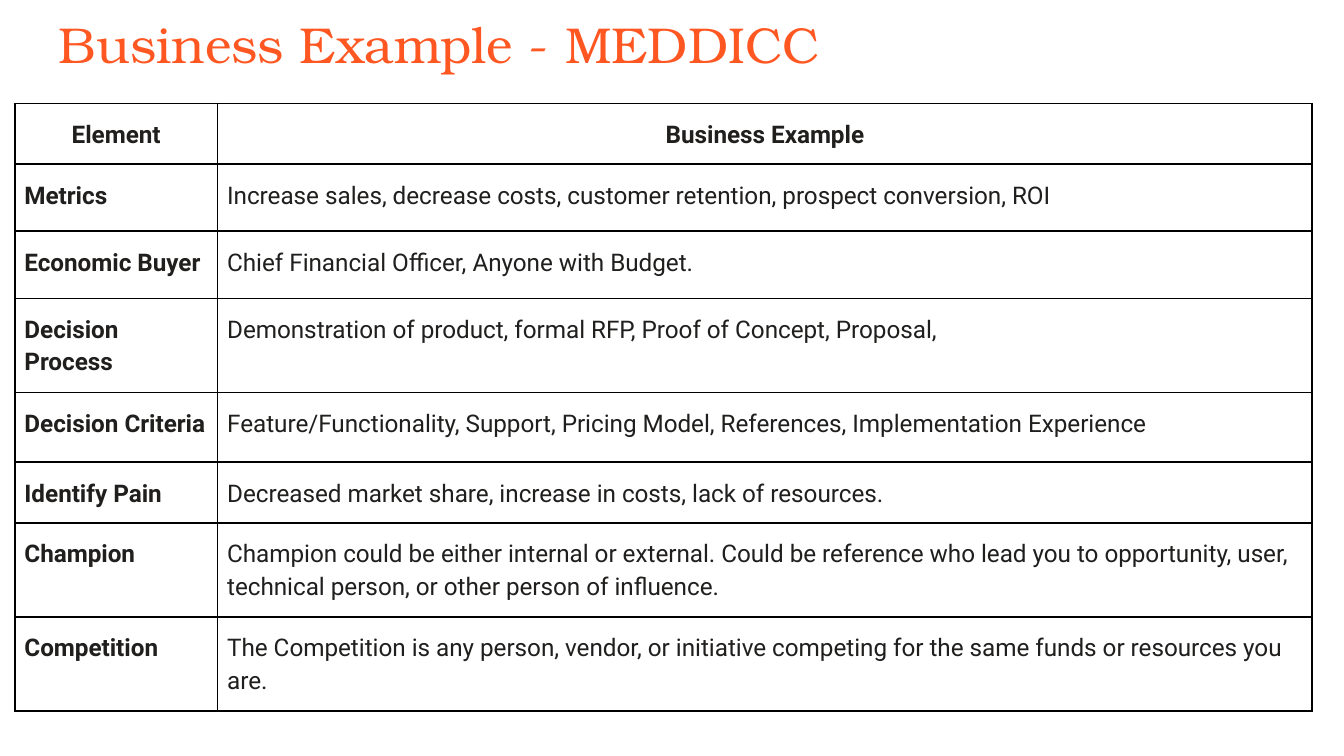
from lxml.etree import SubElement
from pptx import Presentation
from pptx.dml.color import RGBColor
from pptx.enum.text import MSO_ANCHOR as Anchor, PP_ALIGN as Align
from pptx.oxml.ns import qn
from pptx.util import Pt

COLORS = {"title": "FF5722", "text": "201F1E", "border": "000000", "paper": "FFFFFF"}

TITLE = "Business Example - MEDDICC"
HEADINGS = ("Element", "Business Example")
# element, business example, row height
ELEMENTS = [
    ("Metrics", "Increase sales, decrease costs, customer retention, prospect conversion, ROI", 36),
    ("Economic Buyer", "Chief Financial Officer, Anyone with Budget.", 36),
    ("Decision Process", "Demonstration of product, formal RFP, Proof of Concept, Proposal,", 36),
    ("Decision Criteria", "Feature/Functionality, Support, Pricing Model, References, "
     "Implementation Experience", 37.5),
    ("Identify Pain", "Decreased market share, increase in costs, lack of resources.", 25.5),
    ("Champion", "Champion could be either internal or external. Could be reference who lead you "
     "to opportunity, user, technical person, or other person of influence.", 50.4),
    ("Competition", "The Competition is any person, vendor, or initiative competing for the same "
     "funds or resources you are.", 50.4),
]
HEADING_HEIGHT = 26.6
COLUMN_WIDTHS = (108.6, 586.5)
TABLE_LEFT, TABLE_TOP = 7.9, 55.5


def write(frame, text, font="Roboto", size=13, color="text", bold=False,
          align=Align.LEFT, spacing=1.15):
    paragraph = frame.paragraphs[0]
    paragraph.alignment = align
    paragraph.line_spacing = spacing
    run = paragraph.add_run()
    run.text = text
    run.font.name = font
    run.font.size = Pt(size)
    run.font.bold = bold
    run.font.color.rgb = RGBColor.from_string(COLORS[color])


def set_margins(target, side, vertical):
    target.margin_left = target.margin_right = Pt(side)
    target.margin_top = target.margin_bottom = Pt(vertical)


def outline(cell):
    """Draw a 1 pt line on all four sides; must run before the cell is filled."""
    properties = cell._tc.get_or_add_tcPr()
    for side in ("lnL", "lnR", "lnT", "lnB"):
        line = SubElement(properties, qn(f"a:{side}"), w=str(Pt(1)))
        fill = SubElement(line, qn("a:solidFill"))
        SubElement(fill, qn("a:srgbClr"), val=COLORS["border"])


def add_title(slide):
    box = slide.shapes.add_textbox(Pt(24.5), Pt(0), Pt(671), Pt(45.4))
    frame = box.text_frame
    frame.word_wrap = True
    frame.vertical_anchor = Anchor.TOP
    set_margins(frame, 7.2, 7.2)
    write(frame, TITLE, font="TeX Gyre Bonum", size=27, color="title", spacing=1.0)


def add_elements_table(slide):
    rows = [(*HEADINGS, HEADING_HEIGHT), *ELEMENTS]
    heights = [row[-1] for row in rows]
    table = slide.shapes.add_table(
        len(rows), len(COLUMN_WIDTHS), Pt(TABLE_LEFT), Pt(TABLE_TOP),
        Pt(sum(COLUMN_WIDTHS)), Pt(sum(heights))).table
    table.first_row = table.horz_banding = False
    for column, width in zip(table.columns, COLUMN_WIDTHS):
        column.width = Pt(width)
    for r, (*texts, height) in enumerate(rows):
        table.rows[r].height = Pt(height)
        for c, text in enumerate(texts):
            cell = table.cell(r, c)
            outline(cell)
            cell.fill.solid()
            cell.fill.fore_color.rgb = RGBColor.from_string(COLORS["paper"])
            set_margins(cell, 5.2, 7.2)
            write(cell.text_frame, text, bold=r == 0 or c == 0,
                  align=Align.CENTER if r == 0 else Align.LEFT)


def main():
    deck = Presentation()
    deck.slide_width, deck.slide_height = Pt(720), Pt(405)
    slide = deck.slides.add_slide(deck.slide_layouts[6])
    add_title(slide)
    add_elements_table(slide)
    deck.save("out.pptx")


if __name__ == "__main__":
    main()
